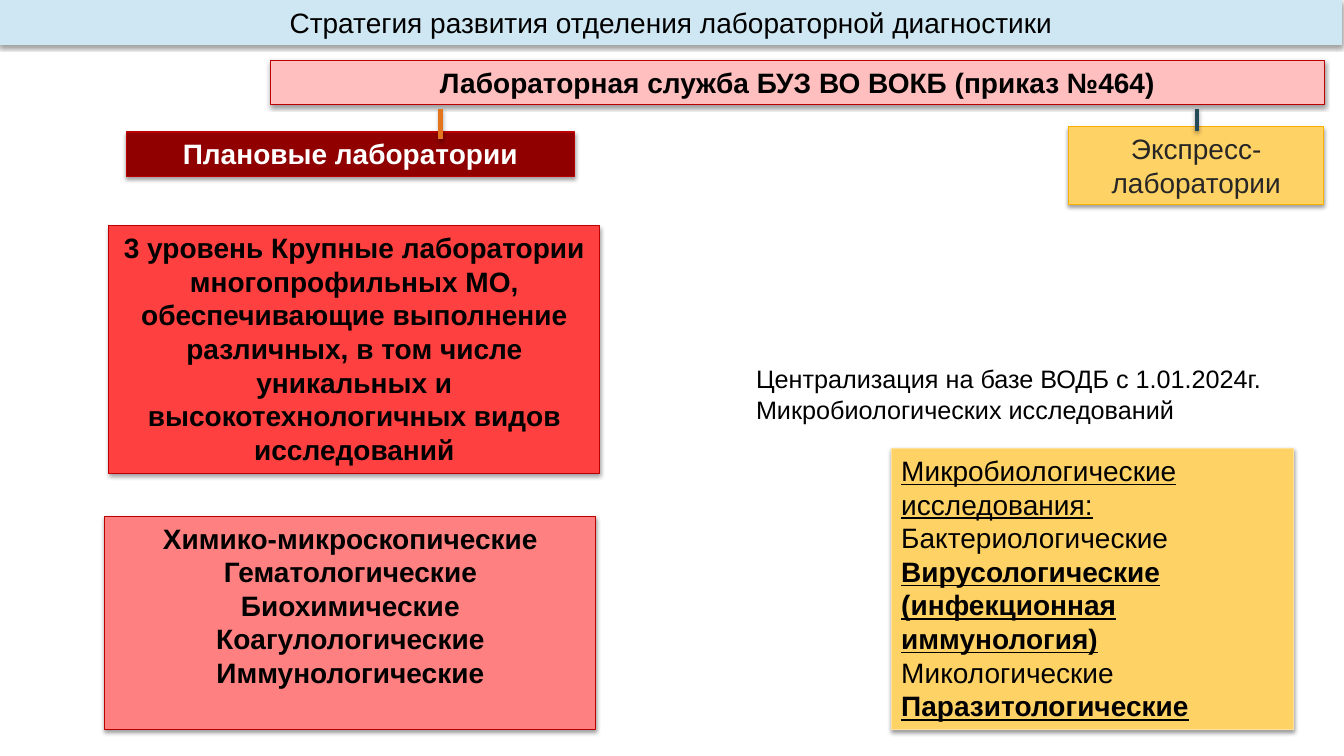
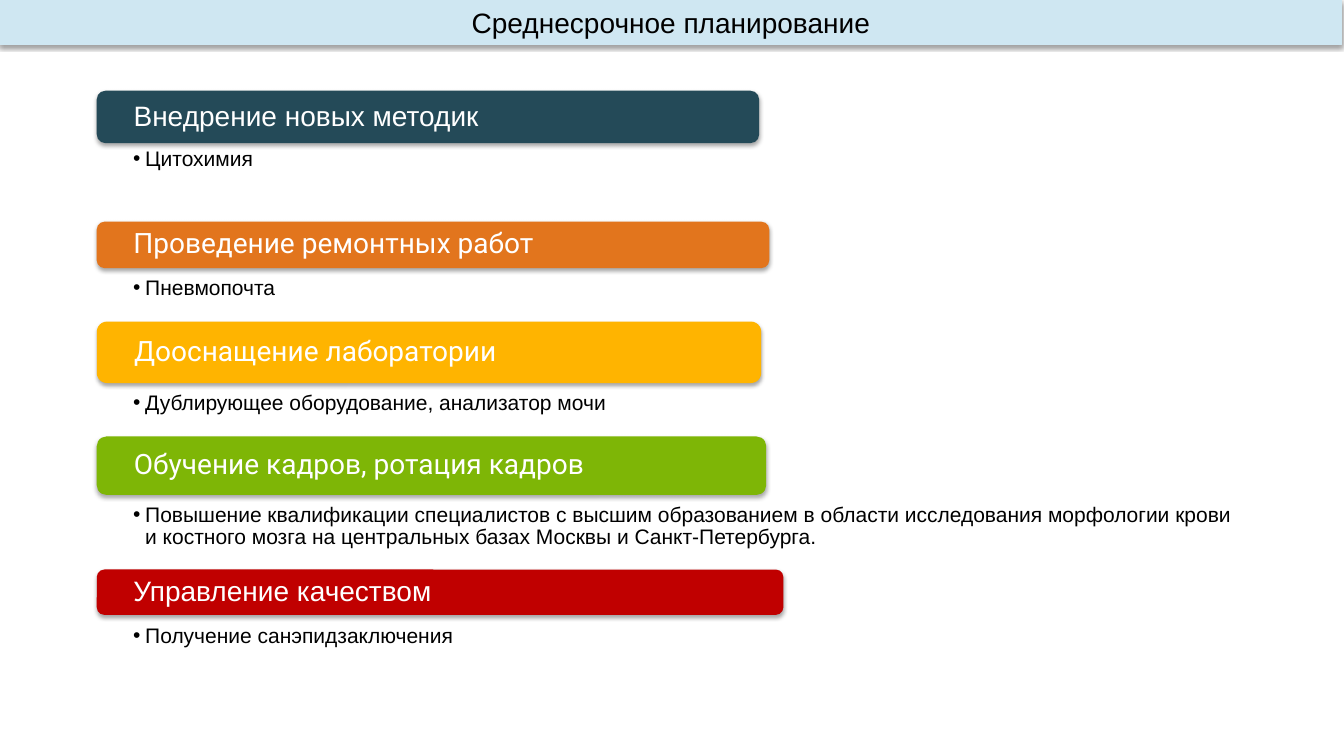
from lxml import etree
from pptx import Presentation
from pptx.dml.color import RGBColor
from pptx.enum.shapes import MSO_CONNECTOR, MSO_SHAPE
from pptx.enum.text import MSO_ANCHOR, MSO_AUTO_SIZE, PP_ALIGN
from pptx.oxml.ns import qn
from pptx.util import Inches, Pt

RECT, ROUNDED = MSO_SHAPE.RECTANGLE, MSO_SHAPE.ROUNDED_RECTANGLE
STRAIGHT = MSO_CONNECTOR.STRAIGHT
LEFT, CENTER = PP_ALIGN.LEFT, PP_ALIGN.CENTER
TOP, MIDDLE = MSO_ANCHOR.TOP, MSO_ANCHOR.MIDDLE
NO_FIT = MSO_AUTO_SIZE.NONE

BLACK = RGBColor(0x00, 0x00, 0x00)
WHITE = RGBColor(0xFF, 0xFF, 0xFF)
CHARCOAL = RGBColor(0x26, 0x26, 0x26)
PALE_BLUE = RGBColor(0xCF, 0xE7, 0xF2)
DARK_RED = RGBColor(0x90, 0x00, 0x00)
BORDER_RED = RGBColor(0xBC, 0x00, 0x00)
BRIGHT_RED = RGBColor(0xFF, 0x40, 0x40)
SOFT_RED = RGBColor(0xFF, 0x80, 0x80)
PINK = RGBColor(0xFF, 0xBF, 0xBF)
SAND = RGBColor(0xFF, 0xD2, 0x66)
PALE_SAND = RGBColor(0xFF, 0xE1, 0x99)
GOLD = RGBColor(0xF9, 0xB0, 0x00)
TEAL = RGBColor(0x24, 0x4A, 0x58)
ORANGE = RGBColor(0xE2, 0x75, 0x1D)
AMBER = RGBColor(0xFF, 0xB4, 0x00)
GREEN = RGBColor(0x7E, 0xB6, 0x06)
RED = RGBColor(0xC0, 0x00, 0x00)

PLAIN = {"name": "Arial", "size": Pt(20), "bold": False, "underline": False}
BOLD = {**PLAIN, "bold": True}
UNDERLINED = {**PLAIN, "underline": True}
BOLD_UNDERLINED = {**BOLD, "underline": True}
NOTE = {**PLAIN, "size": Pt(18)}
DETAIL = {**PLAIN, "size": Pt(15)}
NO_MARGINS = dict.fromkeys(["margin_left", "margin_top", "margin_right", "margin_bottom"], 0)


def decorate(sp, fill=None, line=None, width=0.75, alpha=38, dist=1.6):
    if fill is not None:
        sp.fill.solid()
        sp.fill.fore_color.rgb = fill
    if line is None:
        sp.line.fill.background()
    else:
        sp.line.color.rgb = line
        sp.line.width = Pt(width)
    effects = etree.SubElement(sp._element.spPr, qn("a:effectLst"))
    shadow = etree.SubElement(effects, qn("a:outerShdw"), blurRad=str(Pt(3.1)),
                              dist=str(Pt(dist)), dir="5400000", rotWithShape="0")
    color = etree.SubElement(shadow, qn("a:srgbClr"), val="000000")
    etree.SubElement(color, qn("a:alpha"), val=str(alpha * 1000))


def write(sp, lines, color=BLACK, align=LEFT, anchor=TOP, **frame):
    tf = sp.text_frame
    settings = {"word_wrap": True, "auto_size": NO_FIT, "vertical_anchor": anchor, **frame}
    for key, value in settings.items():
        setattr(tf, key, value)
    for i, (text, fmt) in enumerate(lines):
        p = tf.paragraphs[0] if i == 0 else tf.add_paragraph()
        p.alignment = align
        r = p.add_run()
        r.text = text
        r.font.color.rgb = color
        for key, value in fmt.items():
            setattr(r.font, key, value)
    return tf


prs = Presentation()
prs.slide_width, prs.slide_height = Inches(13.33), Inches(7.5)

slides = []
for title in ["Стратегия развития отделения лабораторной диагностики", "Среднесрочное планирование"]:
    s = prs.slides.add_slide(prs.slide_layouts[5])
    sp = s.shapes.title
    sp.left, sp.top, sp.width, sp.height = map(Inches, (0, 0, 13.31, 0.44))
    decorate(sp, PALE_BLUE, PALE_BLUE)
    write(sp, [(title, PLAIN)], align=CENTER)
    slides.append(s)
strategy, planning = slides

tests = ["Химико-микроскопические", "Гематологические", "Биохимические",
         "Коагулологические", "Иммунологические"]
boxes = [
    ((1.25, 1.31, 4.45, 0.44), DARK_RED, BORDER_RED, WHITE, CENTER,
     [("Плановые лаборатории", BOLD)]),
    ((1.08, 2.24, 4.87, 2.46), BRIGHT_RED, BORDER_RED, BLACK, CENTER,
     [("3 уровень Крупные лаборатории многопрофильных МО, обеспечивающие выполнение "
       "различных, в том числе уникальных и высокотехнологичных видов исследований", BOLD)]),
    ((1.04, 5.12, 4.87, 2.12), SOFT_RED, BORDER_RED, BLACK, CENTER,
     [(test, BOLD) for test in tests]),
    ((2.68, 0.6, 10.46, 0.44), PINK, BORDER_RED, BLACK, CENTER,
     [("Лабораторная служба БУЗ ВО ВОКБ (приказ №464)", BOLD)]),
    ((10.6, 1.26, 2.53, 0.77), SAND, GOLD, CHARCOAL, CENTER,
     [("Экспресс-лаборатории", PLAIN)]),
    ((8.84, 4.45, 3.99, 2.79), SAND, PALE_SAND, BLACK, LEFT,
     [("Микробиологические исследования:", UNDERLINED),
      ("Бактериологические", PLAIN),
      ("Вирусологические (инфекционная иммунология)", BOLD_UNDERLINED),
      ("Микологические", PLAIN),
      ("Паразитологические", BOLD_UNDERLINED)]),
]
for at, fill, line, color, align, lines in boxes:
    sp = strategy.shapes.add_shape(RECT, *map(Inches, at))
    decorate(sp, fill, line)
    write(sp, lines, color, align)

for x, bottom, color in [(4.37, 1.38, ORANGE), (11.87, 1.3, TEAL)]:
    link = strategy.shapes.add_connector(STRAIGHT, *map(Inches, (x, 1.08, x, bottom)))
    decorate(link, line=color, width=3, alpha=35, dist=1.8)

sp = strategy.shapes.add_textbox(*map(Inches, (7.4, 3.56, 5.52, 0.71)))
write(sp, [("Централизация на базе ВОДБ с 1.01.2024г.", NOTE),
           ("Микробиологических исследований", NOTE)])

plans = [
    (0.9, 6.57, 0.52, 1.47, TEAL, "Arial", "Внедрение новых методик", "Цитохимия"),
    (2.2, 6.67, 0.46, 2.75, ORANGE, "Roboto", "Проведение ремонтных работ", "Пневмопочта"),
    (3.19, 6.59, 0.61, 3.89, AMBER, "Roboto", "Дооснащение лаборатории",
     "Дублирующее оборудование, анализатор мочи"),
    (4.33, 6.64, 0.58, 5, GREEN, "Roboto", "Обучение кадров, ротация кадров",
     "Повышение квалификации специалистов с высшим образованием в области исследования "
     "морфологии крови и костного мозга на центральных базах Москвы и Санкт-Петербурга."),
    (5.65, 6.81, 0.45, 6.2, RED, "Arial", "Управление качеством", "Получение санэпидзаключения"),
]
for top, width, height, detail_top, color, font, heading, detail in plans:
    sp = planning.shapes.add_shape(ROUNDED, *map(Inches, (0.96, top, width, height)))
    decorate(sp, color, alpha=35, dist=1.8)
    margins = {**NO_MARGINS, "margin_left": Inches(0.34)}
    tf = write(sp, [(heading, {**PLAIN, "name": font})], WHITE, anchor=MIDDLE, **margins)
    tf.paragraphs[0].line_spacing = 0.9

    sp = planning.shapes.add_textbox(*map(Inches, (1.32, detail_top, 10.98, 0.44)))
    tf = write(sp, [(detail, DETAIL)], **NO_MARGINS)
    p = tf.paragraphs[0]
    p.line_spacing = 0.9
    pPr = p._p.get_or_add_pPr()
    pPr.set("marL", str(Inches(0.12)))
    pPr.set("indent", str(Inches(-0.12)))
    etree.SubElement(pPr, qn("a:buFont"), typeface="Arial")
    etree.SubElement(pPr, qn("a:buChar"), char="•")

prs.save("out.pptx")
